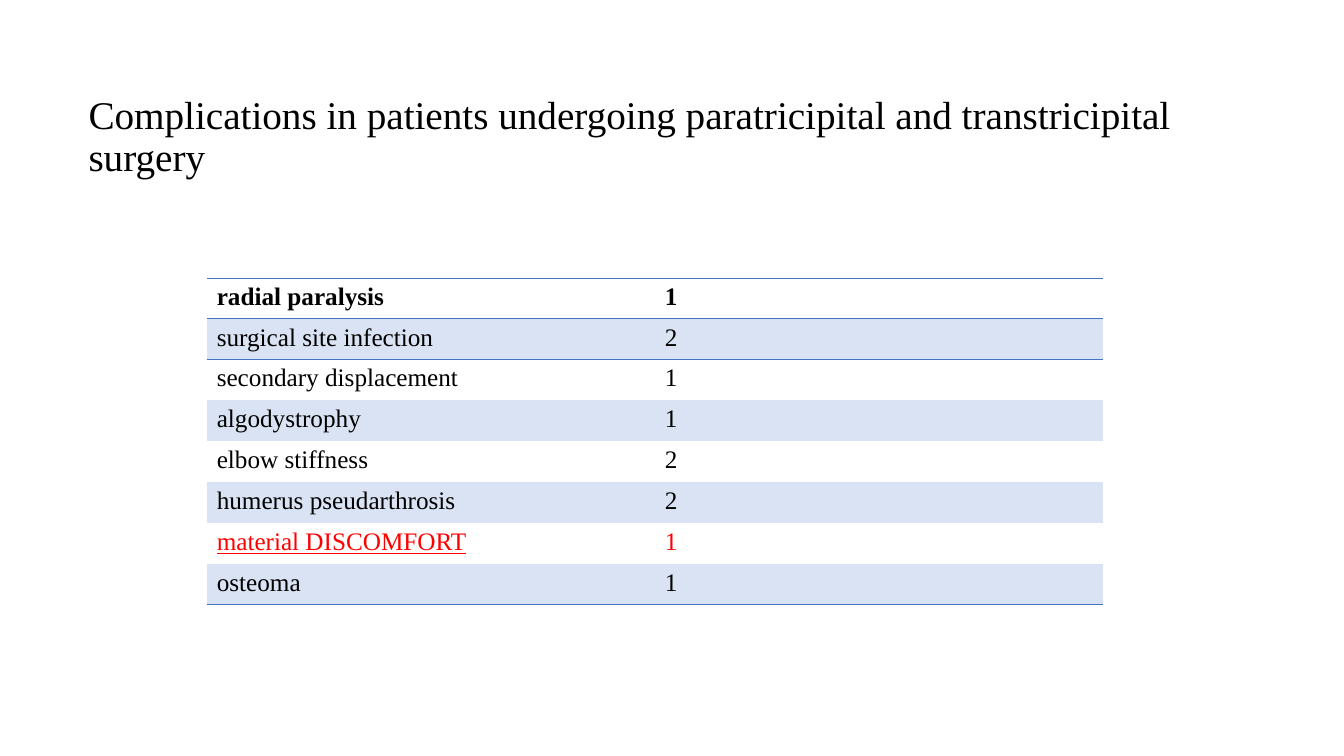
from lxml import etree
from pptx import Presentation
from pptx.dml.color import RGBColor as RGB
from pptx.oxml.ns import qn
from pptx.util import Inches, Pt

TITLE = "Complications in patients undergoing paratricipital and transtricipital surgery"
ROWS = [
    ("radial paralysis", 1),
    ("surgical site infection", 2),
    ("secondary displacement", 1),
    ("algodystrophy", 1),
    ("elbow stiffness", 2),
    ("humerus pseudarthrosis", 2),
    ("material DISCOMFORT", 1),
    ("osteoma", 1),
]
MARKED = "material DISCOMFORT"
COLORS = {"text": "000000", "marked": "FF0000", "line": "4472C4", "band": "DAE3F3"}
FONT = "Times New Roman"
NO_STYLE = "{2D5ABB26-0587-4C30-8999-92F81FD0307C}"
LEFT, TOP, WIDTH = 2.05, 2.76, 8.89
HEAD, BODY = 0.38, 2.84


def style(para, size, color):
    para.font.name = FONT
    para.font.size = Pt(size)
    para.font.color.rgb = RGB.from_string(COLORS[color])


def rule(cell, *sides):
    """Draw a 1 pt line on the given sides, placed ahead of the cell fill."""
    props = cell._tc.get_or_add_tcPr()
    for place, side in enumerate(sides):
        line = etree.Element(qn(f"a:ln{side}"), w=str(Pt(1)))
        fill = etree.SubElement(line, qn("a:solidFill"))
        etree.SubElement(fill, qn("a:srgbClr"), val=COLORS["line"])
        props.insert(place, line)


def add_title(slide):
    box = slide.shapes.add_textbox(Inches(0.78), Inches(0.9), Inches(11.5), Inches(4.76))
    box.text_frame.word_wrap = True
    para = box.text_frame.paragraphs[0]
    para.text = TITLE
    para.line_spacing = 0.9
    para.space_before = Pt(10)
    style(para, 28, "text")


def add_grid(slide):
    frame = slide.shapes.add_table(
        len(ROWS), 2, Inches(LEFT), Inches(TOP), Inches(WIDTH), Inches(HEAD + BODY))
    table = frame.table
    table.first_row = table.horz_banding = False
    table._tbl.tblPr.find(qn("a:tableStyleId")).text = NO_STYLE
    last = len(ROWS) - 1
    for r, row in enumerate(ROWS):
        table.rows[r].height = Inches(BODY / last if r else HEAD)
        marked = row[0] == MARKED
        for c, value in enumerate(row):
            cell = table.cell(r, c)
            cell.text = str(value)
            para = cell.text_frame.paragraphs[0]
            style(para, 18, "marked" if marked else "text")
            para.font.bold = r == 0
            para.font.underline = marked and c == 0
            if r % 2:
                cell.fill.solid()
                cell.fill.fore_color.rgb = RGB.from_string(COLORS["band"])
            else:
                cell.fill.background()
            if r == 0:
                rule(cell, "T", "B")
            elif r == 1:
                rule(cell, "T")
            elif r == last:
                rule(cell, "B")


def main():
    deck = Presentation()
    deck.slide_width, deck.slide_height = Inches(13.33), Inches(7.5)
    slide = deck.slides.add_slide(deck.slide_layouts[6])
    add_title(slide)
    add_grid(slide)
    deck.save("out.pptx")


if __name__ == "__main__":
    main()
